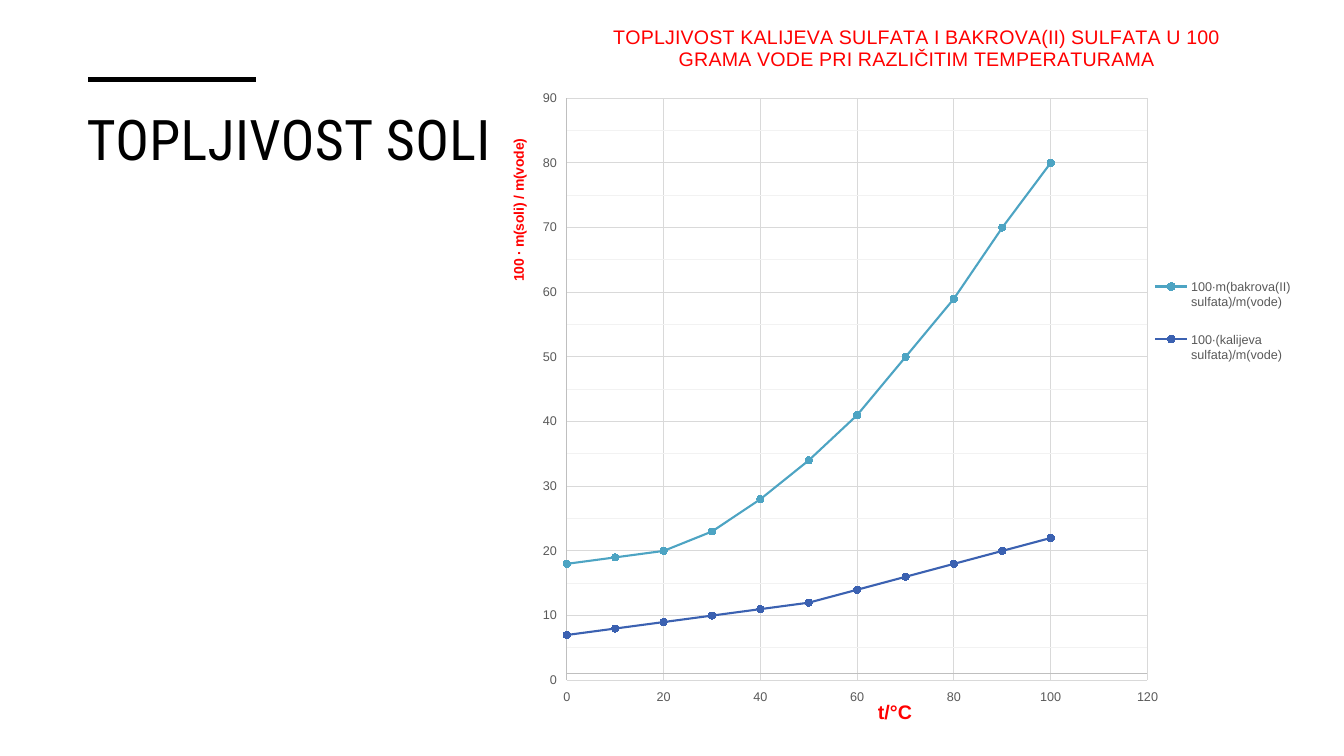
from lxml import etree
from pptx import Presentation
from pptx.chart.data import XyChartData
from pptx.dml.color import RGBColor
from pptx.enum.chart import (XL_CHART_TYPE as CT, XL_LEGEND_POSITION as LP,
                             XL_MARKER_STYLE as MS, XL_TICK_LABEL_POSITION as TL,
                             XL_TICK_MARK as TM)
from pptx.enum.shapes import MSO_CONNECTOR
from pptx.enum.text import MSO_ANCHOR
from pptx.oxml.ns import qn
from pptx.util import Pt

COLORS = {"ink": "000000", "red": "FF0000", "gray": "595959", "axis": "BFBFBF",
          "grid": "D9D9D9", "minor": "F2F2F2", "copper": "4DA4C3", "potassium": "3B61B1"}
TEMPERATURES = range(0, 101, 10)
SALTS = [
    ("100∙m(bakrova(II) sulfata)/m(vode)", "copper", [18, 19, 20, 23, 28, 34, 41, 50, 59, 70, 80]),
    ("100∙(kalijeva sulfata)/m(vode)", "potassium", [7, 8, 9, 10, 11, 12, 14, 16, 18, 20, 22]),
]


def rgb(name):
    return RGBColor.from_string(COLORS[name])


def set_attrs(obj, values):
    for name, value in values.items():
        setattr(obj, name, value)


def style_font(font, size, color, bold=False, name="Arial"):
    set_attrs(font, {"size": Pt(size), "bold": bold, "name": name})
    font.color.rgb = rgb(color)


def style_line(line, color, width):
    line.color.rgb = rgb(color)
    line.width = Pt(width)


def style_minor_grid(axis, color, width):
    axis.has_minor_gridlines = True
    element = axis._element.find(qn("c:minorGridlines"))
    for tag, attrs in (("c:spPr", {}), ("a:ln", {"w": str(Pt(width))}),
                       ("a:solidFill", {}), ("a:srgbClr", {"val": COLORS[color]})):
        element = etree.SubElement(element, qn(tag), attrs)


def place(element, index, **box):
    for old in element.findall(qn("c:layout")):
        element.remove(old)
    layout = etree.Element(qn("c:layout"))
    manual = etree.SubElement(layout, qn("c:manualLayout"))
    if index == 0:
        etree.SubElement(manual, qn("c:layoutTarget"), val="inner")
    for key in ("x", "y"):
        etree.SubElement(manual, qn(f"c:{key}Mode"), val="edge")
    for key, value in box.items():
        etree.SubElement(manual, qn(f"c:{key}"), val=str(value))
    element.insert(index, layout)


def write_title(title, text, size, bold):
    r = title.text_frame.paragraphs[0].add_run()
    r.text = text
    style_font(r.font, size, "red", bold)


def style_axis(axis, top, major):
    set_attrs(axis, {"minimum_scale": 0, "maximum_scale": top, "major_unit": major,
                     "has_major_gridlines": True, "major_tick_mark": TM.NONE,
                     "minor_tick_mark": TM.NONE, "tick_label_position": TL.LOW})
    style_font(axis.tick_labels.font, 9, "gray")
    style_line(axis.format.line, "axis", 0.75)
    style_line(axis.major_gridlines.format.line, "grid", 0.75)


def heading(slide, x, y, w, h):
    rule = slide.shapes.add_connector(MSO_CONNECTOR.STRAIGHT, x + Pt(8.5), y - Pt(14.4),
                                      x + Pt(128), y - Pt(14.4))
    style_line(rule.line, "ink", 3.5)
    etree.SubElement(rule._element.spPr, qn("a:effectLst"))
    tf = slide.shapes.add_textbox(x, y, w, h).text_frame
    set_attrs(tf, {"word_wrap": True, "vertical_anchor": MSO_ANCHOR.TOP})
    r = tf.paragraphs[0].add_run()
    r.text = "TOPLJIVOST SOLI"
    style_font(r.font, 40, "ink", name="Roboto Condensed")
    r.font._element.set("spc", "30")


def solubility_chart(slide, x, y, w, h):
    data = XyChartData()
    for name, _, masses in SALTS:
        series = data.add_series(name)
        for temperature, mass in zip(TEMPERATURES, masses):
            series.add_data_point(temperature, mass)
    chart = slide.shapes.add_chart(CT.XY_SCATTER_SMOOTH, x, y, w, h, data).chart
    style_font(chart.font, 10, "ink")
    write_title(chart.chart_title, "TOPLJIVOST KALIJEVA SULFATA I BAKROVA(II) SULFATA U 100 "
                "GRAMA VODE PRI RAZLIČITIM TEMPERATURAMA", 14, False)

    cat, val = chart.category_axis, chart.value_axis
    style_axis(cat, 120, 20)
    style_axis(val, 90, 10)
    set_attrs(val, {"minor_unit": 5, "crosses_at": 1})
    style_minor_grid(val, "minor", 0.75)
    for axis, text, size, left, top in ((cat, "t/°C", 14, 0.45, 0.92),
                                        (val, "100 ∙ m(soli) / m(vode)", 10, 0.02, 0.18)):
        write_title(axis.axis_title, text, size, True)
        place(axis.axis_title._element, 1, x=left, y=top)

    chart.has_legend = True
    set_attrs(chart.legend, {"position": LP.RIGHT, "include_in_layout": False})
    style_font(chart.legend.font, 9, "gray")
    place(chart.legend._element, 1, x=0.77, y=0.34, w=0.2, h=0.17)
    place(chart._chartSpace.chart.plotArea, 0, x=0.09, y=0.13, w=0.68, h=0.77)

    plot = chart.plots[0]
    plot.vary_by_categories = False
    for series, (_, color, _) in zip(plot.series, SALTS):
        series.smooth = True
        style_line(series.format.line, color, 1.5)
        set_attrs(series.marker, {"style": MS.CIRCLE, "size": 5})
        series.marker.format.fill.solid()
        series.marker.format.fill.fore_color.rgb = rgb(color)
        style_line(series.marker.format.line, color, 0.75)


def main():
    prs = Presentation()
    set_attrs(prs, {"slide_width": Pt(960), "slide_height": Pt(540)})
    slide = prs.slides.add_slide(prs.slide_layouts[6])
    heading(slide, Pt(54.7), Pt(71.3), Pt(308.2), Pt(313.2))
    solubility_chart(slide, Pt(350), Pt(0), Pt(610), Pt(540))
    prs.save("out.pptx")


if __name__ == "__main__":
    main()
